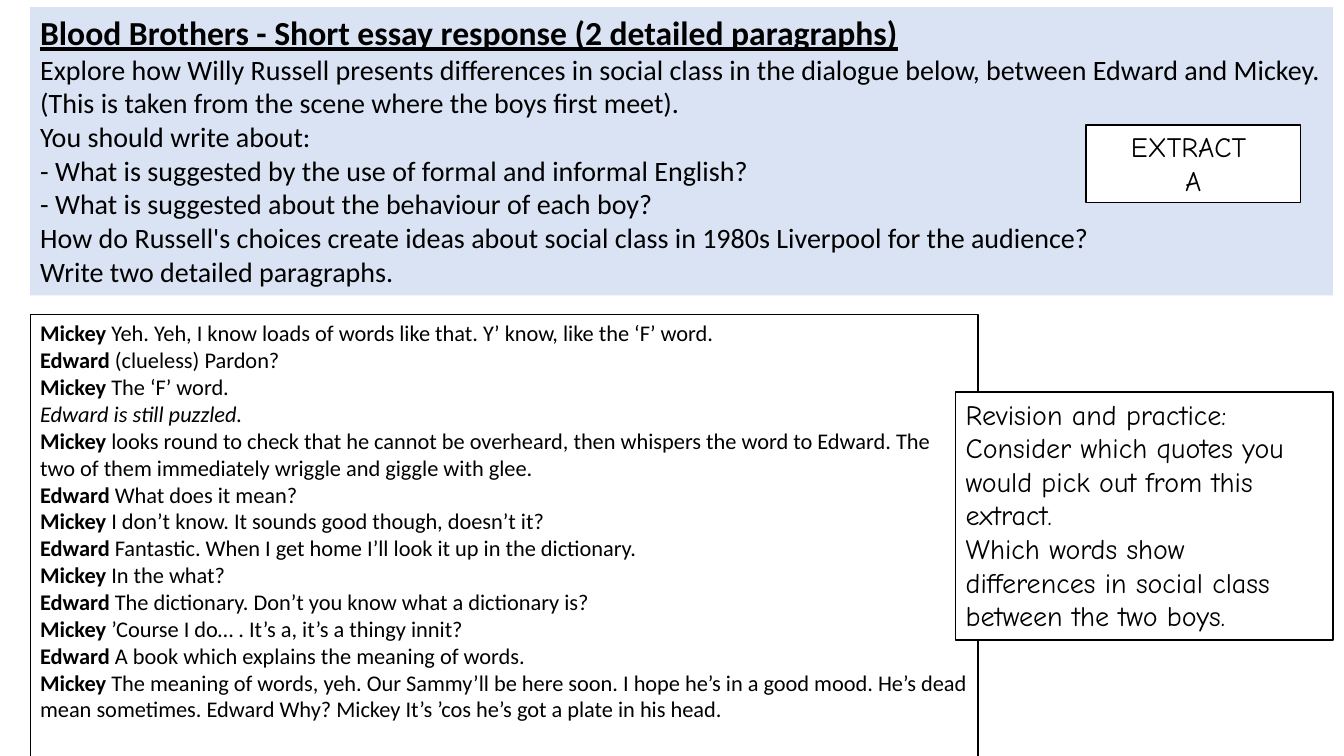
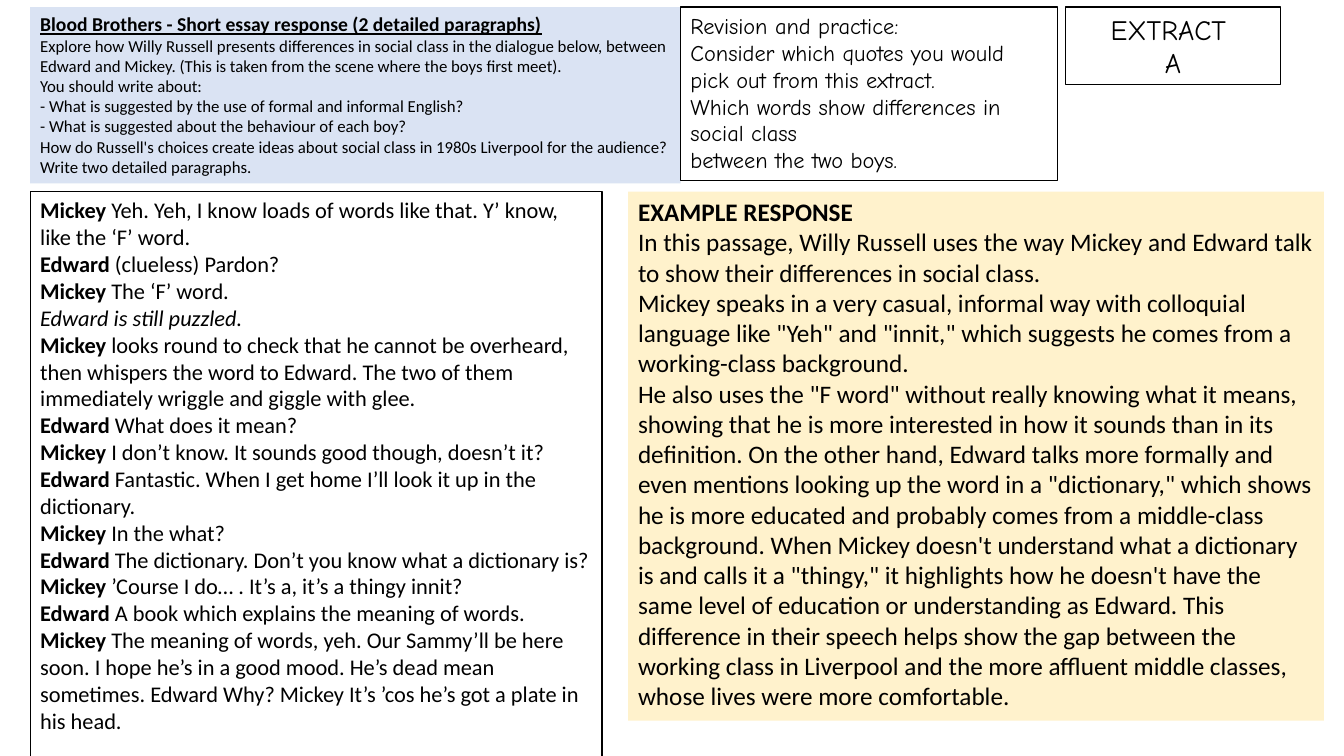
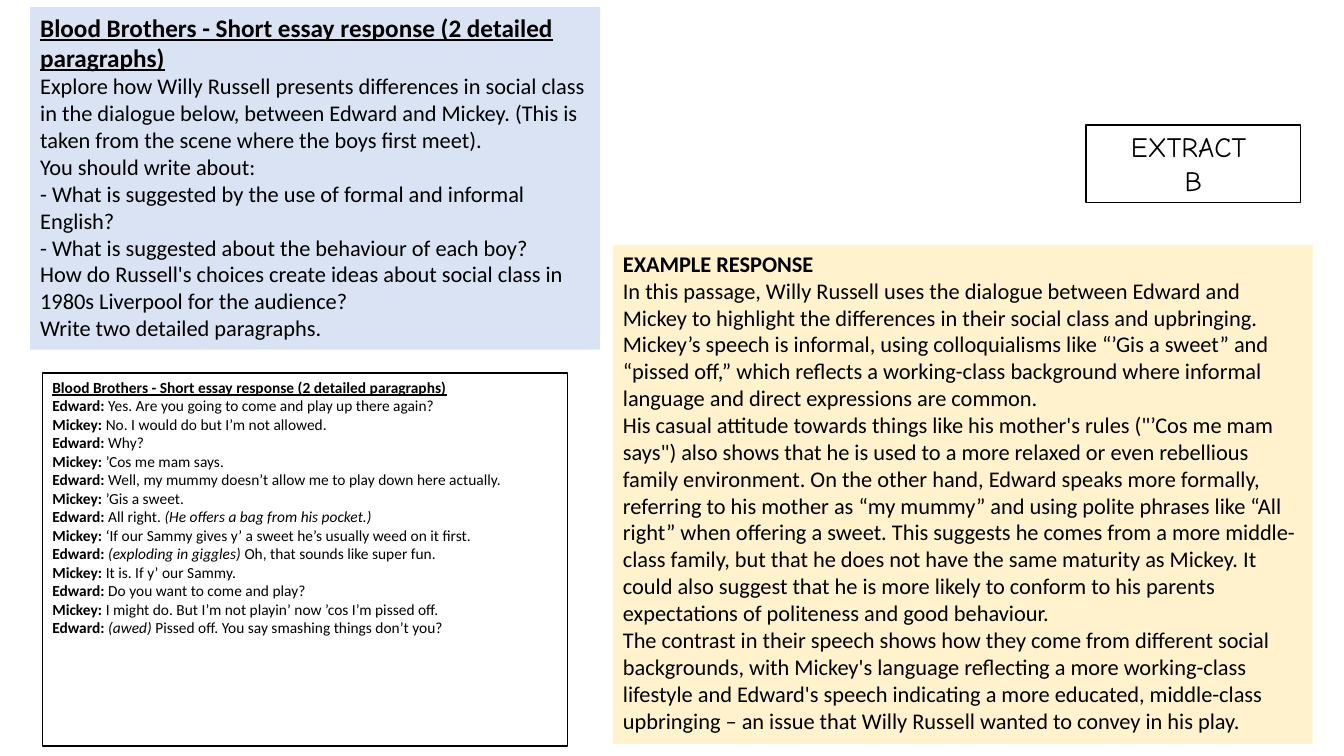
from dataclasses import dataclass

from pptx import Presentation
from pptx.dml.color import RGBColor
from pptx.enum.text import MSO_ANCHOR, MSO_AUTO_SIZE, PP_ALIGN
from pptx.slide import Slide
from pptx.text.text import TextFrame
from pptx.util import Emu, Pt

PX = 9144  # EMU in one px, 100 px to the inch
WIDE, HIGH = 1333, 750
PAD_X, PAD_Y = 10, 5
LEFT, TOP = 30, 7
TAG_W, TAG_H = 213, 77
TIP_W = 374

BLACK = RGBColor(0x00, 0x00, 0x00)
WHITE = RGBColor(0xFF, 0xFF, 0xFF)
BLUE = RGBColor(0xDA, 0xE3, 0xF3)
CREAM = RGBColor(0xFF, 0xF2, 0xCC)

SANS, HAND = "Calibri", "Comic Neue"
START, MID = PP_ALIGN.LEFT, PP_ALIGN.CENTER
ROOF = MSO_ANCHOR.TOP
FIXED = MSO_AUTO_SIZE.NONE

Lines = tuple[str, ...]

# Each string is a paragraph; * switches bold and _ switches italic.
TITLE = "Blood Brothers - Short essay response (2 detailed paragraphs)"
MODEL = "*EXAMPLE RESPONSE*"

TASK: Lines = (
    TITLE,
    "Explore how Willy Russell presents differences in social class in the "
    "dialogue below, between Edward and Mickey. (This is taken from the scene "
    "where the boys first meet).",
    "You should write about:",
    "- What is suggested by the use of formal and informal English?",
    "- What is suggested about the behaviour of each boy?",
    "How do Russell's choices create ideas about social class in 1980s "
    "Liverpool for the audience?",
    "Write two detailed paragraphs.",
)

TIPS: Lines = (
    "Revision and practice:",
    "Consider which quotes you would pick out from this extract.",
    "Which words show differences in social class",
    "between the two boys.",
)

TALK_A: Lines = (
    "*Mickey* Yeh. Yeh, I know loads of words like that. Y’ know, like the ‘F’ word.",
    "*Edward* (clueless) Pardon?",
    "*Mickey* The ‘F’ word.",
    "_Edward is still puzzled._",
    "*Mickey* looks round to check that he cannot be overheard, then whispers "
    "the word to Edward. The two of them immediately wriggle and giggle with glee.",
    "*Edward* What does it mean?",
    "*Mickey* I don’t know. It sounds good though, doesn’t it?",
    "*Edward* Fantastic. When I get home I’ll look it up in the dictionary.",
    "*Mickey* In the what?",
    "*Edward* The dictionary. Don’t you know what a dictionary is?",
    "*Mickey* ’Course I do… . It’s a, it’s a thingy innit?",
    "*Edward* A book which explains the meaning of words.",
    "*Mickey* The meaning of words, yeh. Our Sammy’ll be here soon. I hope "
    "he’s in a good mood. He’s dead mean sometimes. Edward Why? Mickey It’s "
    "’cos he’s got a plate in his head.",
)

TALK_B: Lines = (
    TITLE,
    "*Edward:* Yes. Are you going to come and play up there again?",
    "*Mickey:* No. I would do but I’m not allowed.",
    "*Edward:* Why?",
    "*Mickey:* ’Cos me mam says.",
    "*Edward:* Well, my mummy doesn’t allow me to play down here actually.",
    "*Mickey:* ’Gis a sweet.",
    "*Edward:* All right. _(He offers a bag from his pocket.)_",
    "*Mickey:* ‘If our Sammy gives y’ a sweet he’s usually weed on it first.",
    "*Edward:* _(exploding in giggles)_ Oh, that sounds like super fun.",
    "*Mickey:* It is. If y’ our Sammy.",
    "*Edward:* Do you want to come and play?",
    "*Mickey:* I might do. But I’m not playin’ now ’cos I’m pissed off.",
    "*Edward:* _(awed)_ Pissed off. You say smashing things don’t you?",
)

MODEL_A: Lines = (
    MODEL,
    "In this passage, Willy Russell uses the way Mickey and Edward talk to "
    "show their differences in social class.",
    "Mickey speaks in a very casual, informal way with colloquial language "
    'like "Yeh" and "innit," which suggests he comes from a working-class '
    "background.",
    'He also uses the "F word" without really knowing what it means, showing '
    "that he is more interested in how it sounds than in its definition. On "
    "the other hand, Edward talks more formally and even mentions looking up "
    'the word in a "dictionary," which shows he is more educated and probably '
    "comes from a middle-class background. When Mickey doesn't understand what "
    'a dictionary is and calls it a "thingy," it highlights how he doesn\'t '
    "have the same level of education or understanding as Edward. This "
    "difference in their speech helps show the gap between the working class "
    "in Liverpool and the more affluent middle classes, whose lives were more "
    "comfortable.",
)

MODEL_B: Lines = (
    MODEL,
    "In this passage, Willy Russell uses the dialogue between Edward and "
    "Mickey to highlight the differences in their social class and upbringing. "
    "Mickey’s speech is informal, using colloquialisms like “’Gis a sweet” and "
    "“pissed off,” which reflects a working-class background where informal "
    "language and direct expressions are common.",
    "His casual attitude towards things like his mother's rules (\"’Cos me mam "
    'says") also shows that he is used to a more relaxed or even rebellious '
    "family environment. On the other hand, Edward speaks more formally, "
    "referring to his mother as “my mummy” and using polite phrases like “All "
    "right” when offering a sweet. This suggests he comes from a more "
    "middle-class family, but that he does not have the same maturity as "
    "Mickey. It could also suggest that he is more likely to conform to his "
    "parents expectations of politeness and good behaviour.",
    "The contrast in their speech shows how they come from different social "
    "backgrounds, with Mickey's language reflecting a more working-class "
    "lifestyle and Edward's speech indicating a more educated, middle-class "
    "upbringing – an issue that Willy Russell wanted to convey in his play.",
)


@dataclass(frozen=True)
class Panel:
    x: int
    y: int
    w: int
    h: int
    text: Lines
    size: int
    head: int = 0  # size of an underlined first line, if there is one
    fill: RGBColor = WHITE
    edge: bool = True
    font: str = SANS
    align: PP_ALIGN = START


def task(w: int, h: int, size: int, head: int) -> Panel:
    return Panel(LEFT, TOP, w, h, TASK, size, head, fill=BLUE, edge=False)


def tips(x: int, y: int, h: int, size: int) -> Panel:
    return Panel(x, y, TIP_W, h, TIPS, size, font=HAND)


def tag(x: int, y: int, mark: str) -> Panel:
    return Panel(x, y, TAG_W, TAG_H, ("EXTRACT ", mark), 20, font=HAND, align=MID)


def model(x: int, y: int, w: int, h: int, text: Lines, size: int) -> Panel:
    return Panel(x, y, w, h, text, size, fill=CREAM, edge=False)


DECK: list[list[Panel]] = [
    [
        Panel(LEFT, 312, 940, 488, TALK_A, 16),
        task(1292, 286, 20, 24),
        tips(948, 389, 246, 20),
        tag(1077, 124, "A"),
    ],
    [
        Panel(LEFT, 190, 567, 616, TALK_A, 16),
        task(645, 175, 12, 14),
        tips(675, TOP, 172, 16),
        tag(1057, TOP, "A"),
        model(623, 190, 690, 525, MODEL_A, 18),
    ],
    [
        Panel(42, 370, 521, 370, TALK_B, 11, 11),
        task(565, 340, 16, 18),
        tag(1077, 124, "B"),
        model(608, 243, 694, 495, MODEL_B, 16),
    ],
]


def px(count: int) -> Emu:
    return Emu(count * PX)


def write(frame: TextFrame, text: Lines, *, size: int, head: int = 0,
          font: str = SANS, align: PP_ALIGN = START) -> None:
    """Set one paragraph a line, with * for bold and _ for italic."""
    for row, line in enumerate(text):
        para = frame.add_paragraph() if row else frame.paragraphs[0]
        para.alignment = align
        top = head > 0 and row == 0
        for i, part in enumerate(line.split("*")):
            for j, bit in enumerate(part.split("_")):
                if not bit:
                    continue
                run = para.add_run()
                run.text = bit
                run.font.name = font
                run.font.size = Pt(head if top else size)
                run.font.color.rgb = BLACK
                run.font.bold = top or i % 2 == 1
                run.font.italic = j % 2 == 1
                run.font.underline = top


def draw(slide: Slide, panel: Panel) -> None:
    box = slide.shapes.add_textbox(
        px(panel.x), px(panel.y), px(panel.w), px(panel.h))
    box.fill.solid()
    box.fill.fore_color.rgb = panel.fill
    if panel.edge:
        box.line.color.rgb = BLACK
        box.line.width = Pt(1)
    else:
        box.line.fill.background()
    frame = box.text_frame
    frame.word_wrap = True
    frame.auto_size = FIXED
    frame.vertical_anchor = ROOF
    frame.margin_left = frame.margin_right = px(PAD_X)
    frame.margin_top = frame.margin_bottom = px(PAD_Y)
    write(frame, panel.text, size=panel.size, head=panel.head,
          font=panel.font, align=panel.align)


def main() -> None:
    deck = Presentation()
    deck.slide_width, deck.slide_height = px(WIDE), px(HIGH)
    blank = deck.slide_layouts[6]
    for panels in DECK:
        slide = deck.slides.add_slide(blank)
        for panel in panels:
            draw(slide, panel)
    deck.save("out.pptx")


if __name__ == "__main__":
    main()
